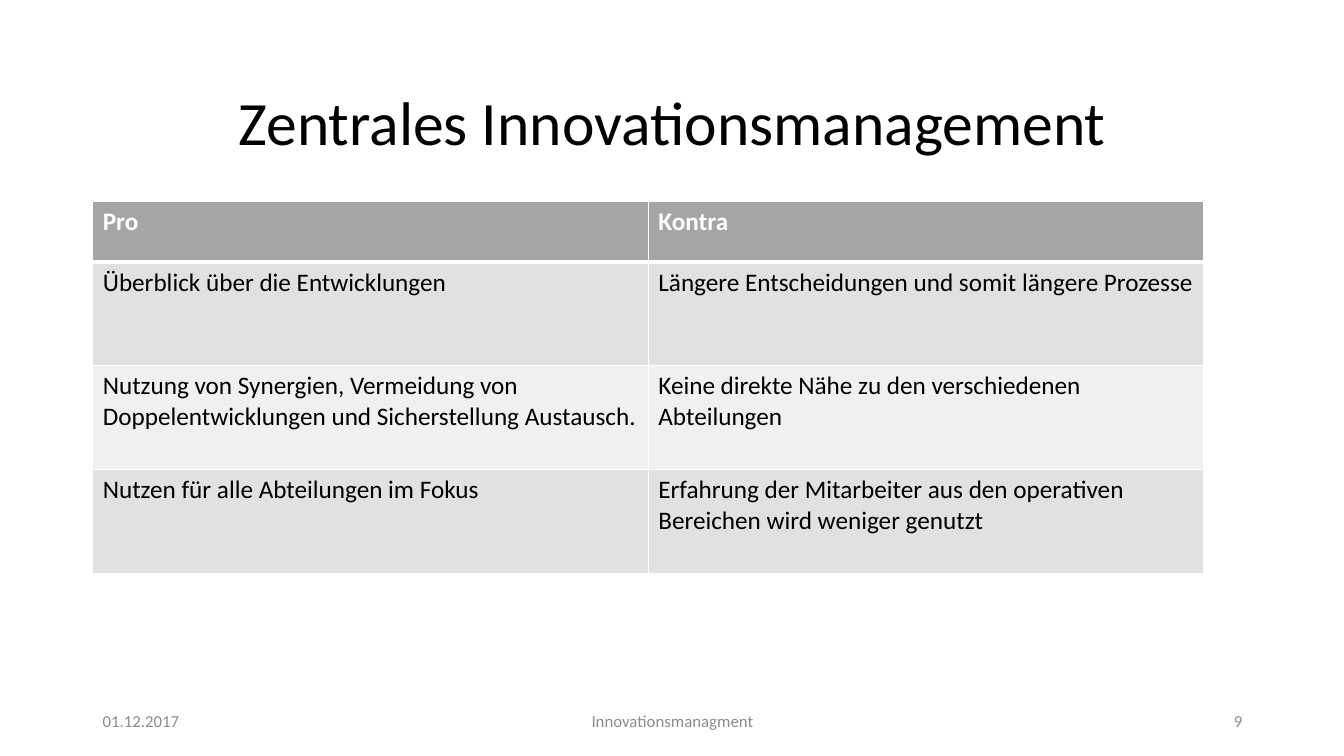
import pptx
import pptx.dml.color
import pptx.enum.text
import pptx.oxml.ns
import pptx.util
from lxml import etree

Inches = pptx.util.Inches
Pt = pptx.util.Pt
RGBColor = pptx.dml.color.RGBColor
Align = pptx.enum.text.PP_ALIGN
Anchor = pptx.enum.text.MSO_ANCHOR
qn = pptx.oxml.ns.qn

BLACK = RGBColor(0x00, 0x00, 0x00)
WHITE = RGBColor(0xFF, 0xFF, 0xFF)
FOOTER_GREY = RGBColor(0x8C, 0x8C, 0x8C)
HEADER_GREY = RGBColor(0xA5, 0xA5, 0xA5)
BANDS = [RGBColor(0xE1, 0xE1, 0xE1), RGBColor(0xF0, 0xF0, 0xF0)]

ARGUMENTS = [
    ("Pro", "Kontra"),
    ("Überblick über die Entwicklungen",
     "Längere Entscheidungen und somit längere Prozesse"),
    ("Nutzung von Synergien, Vermeidung von Doppelentwicklungen und Sicherstellung Austausch.",
     "Keine direkte Nähe zu den verschiedenen Abteilungen"),
    ("Nutzen für alle Abteilungen im Fokus",
     "Erfahrung der Mitarbeiter aus den operativen Bereichen wird weniger genutzt"),
]
FOOTER = [
    ("01.12.2017", 0.92, 3, Align.LEFT),
    ("Innovationsmanagment", 4.42, 4.5, Align.CENTER),
    ("9", 9.42, 3, Align.RIGHT),
]


class SlideBuilder:
    """Holds the text styles and the slide being filled."""

    title_style = {"name": "Calibri", "size": Pt(44), "bold": False}
    header_style = {"name": "Calibri", "size": Pt(18), "bold": True}
    body_style = {"name": "Calibri", "size": Pt(18), "bold": False}
    footer_style = {"name": "Calibri", "size": Pt(12), "bold": False}

    def __init__(self, slide):
        self.slide = slide

    def set_text(self, frame, text, style, color, align=Align.LEFT):
        frame.text = text
        paragraph = frame.paragraphs[0]
        paragraph.alignment = align
        font = paragraph.runs[0].font
        for attribute, value in style.items():
            setattr(font, attribute, value)
        font.color.rgb = color
        return paragraph

    def title(self, text, left, top, width, height):
        heading = self.slide.shapes.title
        box = {"left": left, "top": top, "width": width, "height": height}
        for attribute, value in box.items():
            setattr(heading, attribute, Inches(value))
        heading.text_frame.vertical_anchor = Anchor.MIDDLE
        paragraph = self.set_text(heading.text_frame, text, self.title_style, BLACK, Align.CENTER)
        paragraph.line_spacing = 0.9

    def footer(self, text, left, width, align):
        part = self.slide.shapes.add_textbox(
            Inches(left), Inches(6.95), Inches(width), Inches(0.4))
        part.text_frame.word_wrap = True
        part.text_frame.vertical_anchor = Anchor.MIDDLE
        self.set_text(part.text_frame, text, self.footer_style, FOOTER_GREY, align)

    def borders(self, cell, widths):
        properties = cell._tc.get_or_add_tcPr()
        for side, width in widths.items():
            line = etree.SubElement(properties, qn(f"a:ln{side}"), w=str(Pt(width)))
            fill = etree.SubElement(line, qn("a:solidFill"))
            etree.SubElement(fill, qn("a:srgbClr"), val=str(WHITE))

    def table(self, rows, left, top, column_width, row_heights):
        grid = self.slide.shapes.add_table(
            len(rows), len(rows[0]), Inches(left), Inches(top),
            Inches(column_width * len(rows[0])), Inches(sum(row_heights))).table
        for column in grid.columns:
            column.width = Inches(column_width)
        for r, texts in enumerate(rows):
            grid.rows[r].height = Inches(row_heights[r])
            is_header = r == 0
            style = self.header_style if is_header else self.body_style
            for c, text in enumerate(texts):
                cell = grid.cell(r, c)
                # The heavier rule lies between the header and the first row
                self.borders(cell, {"L": 1, "R": 1, "T": 3 if r == 1 else 1,
                                    "B": 3 if is_header else 1})
                cell.fill.solid()
                cell.fill.fore_color.rgb = HEADER_GREY if is_header else BANDS[(r - 1) % 2]
                self.set_text(cell.text_frame, text, style, WHITE if is_header else BLACK)


def main():
    presentation = pptx.Presentation()
    presentation.slide_width = Inches(13.33)
    presentation.slide_height = Inches(7.5)
    title_only = presentation.slide_layouts[5]
    builder = SlideBuilder(presentation.slides.add_slide(title_only))

    # Title
    builder.title("Zentrales Innovationsmanagement", 0.92, 0.76, 11.5, 0.97)

    # Arguments for and against
    builder.table(ARGUMENTS, 0.92, 2, 5.51, [0.6, 1.03, 1.03, 1.03])

    # Date, topic and page number
    for text, left, width, align in FOOTER:
        builder.footer(text, left, width, align)

    presentation.save("out.pptx")


if __name__ == "__main__":
    main()
